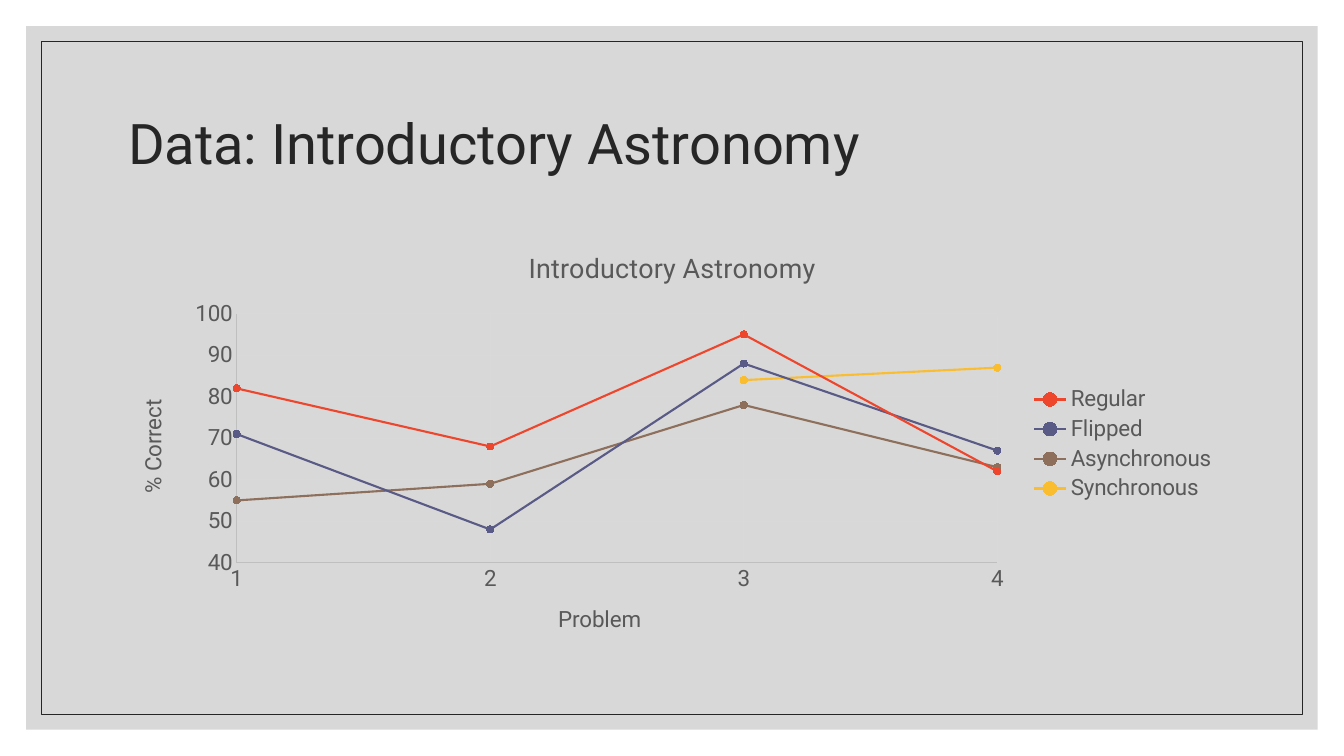
from lxml import etree
from pptx import Presentation
from pptx.chart.data import XyChartData
from pptx.dml.color import RGBColor
from pptx.enum.chart import XL_CHART_TYPE as ChartType
from pptx.enum.chart import XL_LEGEND_POSITION as LegendPosition
from pptx.enum.chart import XL_MARKER_STYLE as MarkerStyle
from pptx.enum.chart import XL_TICK_MARK as TickMark
from pptx.enum.shapes import MSO_SHAPE as Shape
from pptx.enum.text import MSO_ANCHOR as Anchor
from pptx.enum.text import PP_ALIGN as Align
from pptx.oxml import parse_xml
from pptx.oxml.ns import qn
from pptx.util import Inches, Pt

SCORES = {
    "Regular": ("EE462D", {1: 82, 2: 68, 3: 95, 4: 62}),
    "Flipped": ("595A85", {1: 71, 2: 48, 3: 88, 4: 67}),
    "Asynchronous": ("8D6F5B", {1: 55, 2: 59, 3: 78, 4: 63}),
    "Synchronous": ("FABD2F", {3: 84, 4: 87}),
}
PLOT_AREA = {"x": 0.107, "y": 0.193, "w": 0.686, "h": 0.587}


def color(value):
    return RGBColor.from_string(value)


class SlideBuilder:
    font_name = "Roboto"
    dark = "262626"
    gray = "595959"
    axis_gray = "BFBFBF"
    grid_gray = "D9D9D9"
    chart_size = 16

    def __init__(self, slide):
        self.slide = slide

    def set_font(self, font, size, font_color):
        font.name = self.font_name
        font.size = Pt(size)
        font.bold = False
        font.color.rgb = color(font_color)

    def set_line(self, line, line_color, width):
        line.color.rgb = color(line_color)
        line.width = Pt(width)

    def frame(self, margin, fill=None, opacity=100, line=None):
        """Add a rectangle with the same margin on all sides, behind the title."""
        shape = self.slide.shapes.add_shape(
            Shape.RECTANGLE, Inches(margin), Inches(margin),
            Inches(13.33 - 2 * margin), Inches(7.5 - 2 * margin))
        shape.shadow.inherit = False
        if fill:
            shape.fill.solid()
            shape.fill.fore_color.rgb = color(fill)
            fill_color = shape.element.spPr.find(qn("a:solidFill"))[0]
            etree.SubElement(fill_color, qn("a:alpha"), val=str(opacity * 1000))
        else:
            shape.fill.background()
        if line:
            self.set_line(shape.line, line, 0.5)
        else:
            shape.line.fill.background()
        self.slide.shapes.title.element.addprevious(shape.element)

    def title(self, text, left, top, width, height):
        title = self.slide.shapes.title
        title.left, title.top = Inches(left), Inches(top)
        title.width, title.height = Inches(width), Inches(height)
        title.text_frame.text = text
        title.text_frame.vertical_anchor = Anchor.MIDDLE
        paragraph = title.text_frame.paragraphs[0]
        paragraph.alignment = Align.LEFT
        paragraph.line_spacing = 0.9
        self.set_font(paragraph.font, 40, self.dark)

    def chart_text(self, text_frame, text, size):
        text_frame.text = text
        self.set_font(text_frame.paragraphs[0].font, size, self.gray)

    def axis(self, axis, text, minimum, maximum, step):
        axis.minimum_scale, axis.maximum_scale = minimum, maximum
        axis.major_unit = step
        axis.major_tick_mark = axis.minor_tick_mark = TickMark.NONE
        axis.has_major_gridlines = True
        self.set_line(axis.major_gridlines.format.line, self.grid_gray, 0.75)
        self.set_line(axis.format.line, self.axis_gray, 0.75)
        self.set_font(axis.tick_labels.font, self.chart_size, self.gray)
        self.chart_text(axis.axis_title.text_frame, text, self.chart_size)

    def plot_layout(self, chart):
        """Fix the inner plot area as fractions of the chart."""
        plot_area = chart.element.find(".//" + qn("c:plotArea"))
        for layout in plot_area.findall(qn("c:layout")):
            plot_area.remove(layout)
        sizes = "".join(f'<c:{key} val="{value}"/>' for key, value in PLOT_AREA.items())
        plot_area.insert(0, parse_xml(
            '<c:layout xmlns:c="http://schemas.openxmlformats.org/drawingml/2006/chart">'
            '<c:manualLayout><c:layoutTarget val="inner"/>'
            '<c:xMode val="edge"/><c:yMode val="edge"/>'
            f'{sizes}</c:manualLayout></c:layout>'))

    def score_chart(self, left, top, width, height):
        data = XyChartData()
        for name, (_, points) in SCORES.items():
            series = data.add_series(name)
            for problem, score in points.items():
                series.add_data_point(problem, score)
        chart = self.slide.shapes.add_chart(
            ChartType.XY_SCATTER_LINES, Inches(left), Inches(top),
            Inches(width), Inches(height), data).chart
        self.set_font(chart.font, self.chart_size, "000000")

        chart.has_title = True
        self.chart_text(chart.chart_title.text_frame, "Introductory Astronomy", 19.2)
        chart.chart_title.include_in_layout = False
        chart.has_legend = True
        chart.legend.position = LegendPosition.RIGHT
        chart.legend.include_in_layout = False
        self.set_font(chart.legend.font, self.chart_size, self.gray)

        self.axis(chart.category_axis, "Problem", 1, 4, 1)
        self.axis(chart.value_axis, "% Correct", 40, 100, 10)
        body = chart.value_axis.axis_title.element.find(".//" + qn("a:bodyPr"))
        body.set("rot", "-5400000")
        body.set("vert", "horz")

        chart.plots[0].vary_by_categories = False
        for series in chart.plots[0].series:
            series_color = SCORES[series.name][0]
            series.smooth = False
            self.set_line(series.format.line, series_color, 1.5)
            series.marker.style = MarkerStyle.CIRCLE
            series.marker.size = 5
            series.marker.format.fill.solid()
            series.marker.format.fill.fore_color.rgb = color(series_color)
            self.set_line(series.marker.format.line, series_color, 0.75)
        self.plot_layout(chart)


def main():
    presentation = Presentation()
    presentation.slide_width = Inches(13.33)
    presentation.slide_height = Inches(7.5)
    title_only = presentation.slide_layouts[5]
    builder = SlideBuilder(presentation.slides.add_slide(title_only))
    builder.frame(0.26, fill="BFBFBF", opacity=60)
    builder.frame(0.41, line=builder.dark)
    builder.title("Data: Introductory Astronomy", 1.17, 0.7, 11, 1.5)
    builder.score_chart(1.17, 2.3, 11, 4.21)
    presentation.save("out.pptx")


if __name__ == "__main__":
    main()
